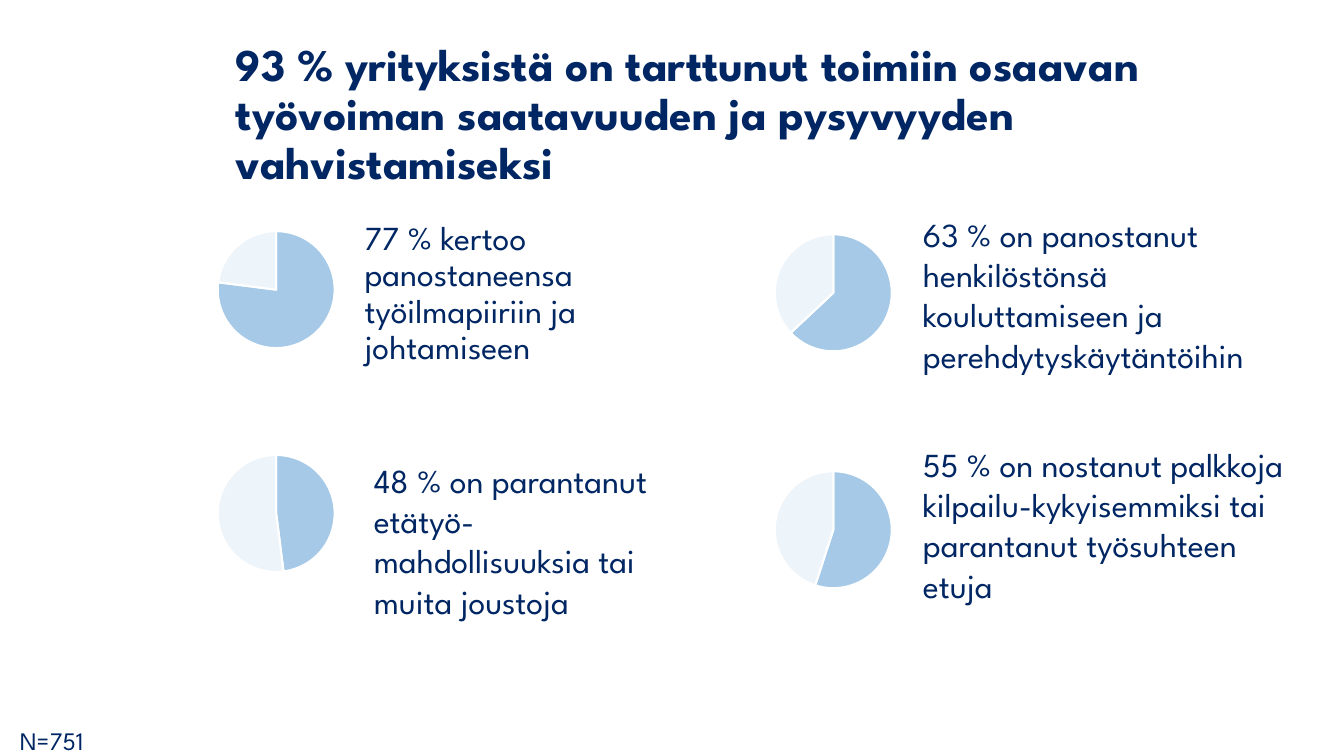
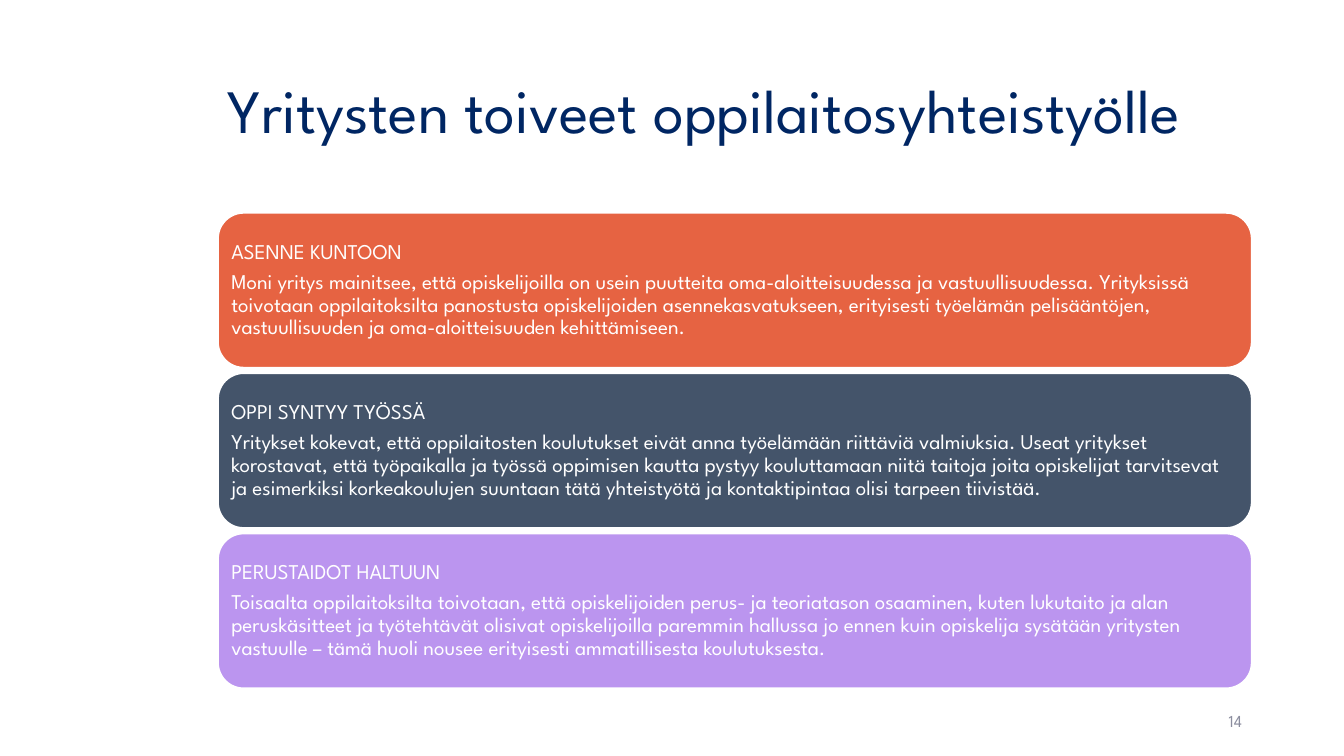
from dataclasses import dataclass

from pptx import Presentation
from pptx.chart.data import CategoryChartData
from pptx.dml.color import RGBColor
from pptx.enum.chart import XL_CHART_TYPE
from pptx.enum.shapes import MSO_SHAPE
from pptx.enum.text import MSO_ANCHOR, PP_ALIGN
from pptx.oxml import parse_xml
from pptx.oxml.ns import nsdecls, qn
from pptx.util import Cm, Pt


@dataclass(frozen=True)
class Theme:
    font: str = "League Spartan"
    navy: str = "002663"
    gray: str = "8C8E9F"
    white: str = "FFFFFF"
    share: str = "A5C9E7"
    rest: str = "EDF4FA"
    cards: tuple = ("E66342", "44546A", "BB95EF")
    head: float = 44
    claim: float = 32.4
    body: float = 24
    note: float = 18
    card: float = 15
    small: float = 12


THEME = Theme()

# Pie place, text box (left, top, width, height) in cm, line spacing
PIES = [
    (77, "77 % kertoo panostaneensa työilmapiiriin ja johtamiseen",
     (4.98, 5.46), (8.94, 5.46, 8.69, 4.72), 0.9),
    (48, "48 % on parantanut etätyö-mahdollisuuksia tai muita joustoja",
     (4.98, 11.1), (9.17, 11.46, 8.48, 4.37), 1.0),
    (63, "63 % on panostanut henkilöstönsä kouluttamiseen ja "
         "perehdytyskäytäntöihin",
     (19.02, 5.54), (23.01, 5.26, 10.31, 4.37), 1.0),
    (55, "55 % on nostanut palkkoja kilpailu-kykyisemmiksi tai parantanut "
         "työsuhteen etuja",
     (19.02, 11.51), (23.01, 11.05, 10.31, 5.38), 1.0),
]

CARDS = [
    ("ASENNE KUNTOON",
     "Moni yritys mainitsee, että opiskelijoilla on usein puutteita "
     "oma-aloitteisuudessa ja vastuullisuudessa. Yrityksissä toivotaan "
     "oppilaitoksilta panostusta opiskelijoiden asennekasvatukseen, "
     "erityisesti työelämän pelisääntöjen, vastuullisuuden ja "
     "oma-aloitteisuuden kehittämiseen."),
    ("OPPI SYNTYY TYÖSSÄ",
     "Yritykset kokevat, että oppilaitosten koulutukset eivät anna "
     "työelämään riittäviä valmiuksia. Useat yritykset korostavat, että "
     "työpaikalla ja työssä oppimisen kautta pystyy kouluttamaan niitä "
     "taitoja joita opiskelijat tarvitsevat ja esimerkiksi korkeakoulujen "
     "suuntaan tätä yhteistyötä ja kontaktipintaa olisi tarpeen tiivistää."),
    ("PERUSTAIDOT HALTUUN",
     "Toisaalta oppilaitoksilta toivotaan, että opiskelijoiden perus- ja "
     "teoriatason osaaminen, kuten lukutaito ja alan peruskäsitteet ja "
     "työtehtävät olisivat opiskelijoilla paremmin hallussa jo ennen kuin "
     "opiskelija sysätään yritysten vastuulle – tämä huoli nousee "
     "erityisesti ammatillisesta koulutuksesta."),
]


def paint(fill, color):
    fill.solid()
    fill.fore_color.rgb = RGBColor.from_string(color)


def style(font, size, color, bold=False):
    font.name = THEME.font
    font.size = Pt(size)
    font.bold = bold
    font.color.rgb = RGBColor.from_string(color)


def write(para, text, size, color, bold=False, space=1.0,
          align=PP_ALIGN.LEFT):
    para.alignment = align
    para.line_spacing = space
    run = para.add_run()
    run.text = text
    style(run.font, size, color, bold)


def add_text(slide, box, text, size, color=THEME.navy,
             anchor=MSO_ANCHOR.TOP, **look):
    frame = slide.shapes.add_textbox(*map(Cm, box)).text_frame
    frame.word_wrap = True
    frame.vertical_anchor = anchor
    write(frame.paragraphs[0], text, size, color, **look)
    return frame


def add_title(slide, box, text, size, bold=False):
    add_text(slide, box, text, size, anchor=MSO_ANCHOR.MIDDLE,
             bold=bold, space=0.9)


def add_pie(slide, place, share):
    data = CategoryChartData()
    data.categories = ["1", "2"]
    data.add_series("Series 1", (share, 100 - share))
    wide, high, disc = 3.96, 3.68, 2.95
    chart = slide.shapes.add_chart(
        XL_CHART_TYPE.PIE, *map(Cm, (*place, wide, high)), data).chart
    chart.has_legend = False
    chart.has_title = False
    style(chart.font, 10, THEME.navy)
    plot = chart.plots[0]
    plot.vary_by_categories = True
    for index, color in enumerate((THEME.share, THEME.rest)):
        form = plot.series[0].points[index].format
        paint(form.fill, color)
        paint(form.line.fill, THEME.white)
        form.line.width = Pt(1.5)
    # Centre the disc inside the chart frame
    area = chart.element.find(".//" + qn("c:plotArea"))
    for old in area.findall(qn("c:layout")):
        area.remove(old)
    w, h = disc / wide, disc / high
    sizes = {"x": (1 - w) / 2, "y": (1 - h) / 2, "w": w, "h": h}
    modes = "".join(f'<c:{k}Mode val="edge"/>' for k in "xy")
    parts = "".join(f'<c:{k} val="{v:.3f}"/>' for k, v in sizes.items())
    area.insert(0, parse_xml(
        f'<c:layout {nsdecls("c")}><c:manualLayout>'
        f'<c:layoutTarget val="inner"/>{modes}{parts}'
        '</c:manualLayout></c:layout>'))


def add_card(slide, box, color, texts):
    card = slide.shapes.add_shape(MSO_SHAPE.ROUNDED_RECTANGLE, *map(Cm, box))
    card.shadow.inherit = False
    paint(card.fill, color)
    paint(card.line.fill, THEME.white)
    card.line.width = Pt(1.5)
    frame = card.text_frame
    frame.word_wrap = True
    frame.vertical_anchor = MSO_ANCHOR.MIDDLE
    # The rounded corners already inset the text area by 0.19 cm
    frame.margin_left = frame.margin_right = Cm(0.15)
    frame.margin_top = frame.margin_bottom = Cm(0.15)
    for index, text in enumerate(texts):
        para = frame.add_paragraph() if index else frame.paragraphs[0]
        para.space_after = Pt(0.35 * THEME.card)
        write(para, text, THEME.card, THEME.white, space=0.9)


def add_steps(slide):
    """Measures taken by companies, one pie each."""
    add_title(slide, (5.69, 1.07, 25.86, 3.68),
              "93 % yrityksistä on tarttunut toimiin osaavan työvoiman "
              "saatavuuden ja pysyvyyden vahvistamiseksi",
              THEME.claim, bold=True)
    for share, text, place, box, space in PIES:
        add_pie(slide, place, share)
        add_text(slide, box, text, THEME.body, space=space)
    note = add_text(slide, (0.25, 18.14, 3.38, 0.91), "N=751", THEME.note)
    note.margin_bottom = 0


def add_hopes(slide):
    """Wishes for schools, one card each."""
    left, top, wide, high, step = 5.49, 5.36, 26.06, 3.91, 4.04
    add_title(slide, (left, 1.02, wide, 3.68),
              "Yritysten toiveet oppilaitosyhteistyölle", THEME.head)
    for row, (color, texts) in enumerate(zip(THEME.cards, CARDS)):
        add_card(slide, (left, top + row * step, wide, high), color, texts)
    add_text(slide, (23.93, 17.65, 7.62, 1.02), "14", THEME.small,
             THEME.gray, MSO_ANCHOR.MIDDLE, align=PP_ALIGN.RIGHT)


def main():
    deck = Presentation()
    deck.slide_width, deck.slide_height = Cm(33.87), Cm(19.05)
    for build in (add_steps, add_hopes):
        build(deck.slides.add_slide(deck.slide_layouts[6]))
    deck.save("out.pptx")


if __name__ == "__main__":
    main()
